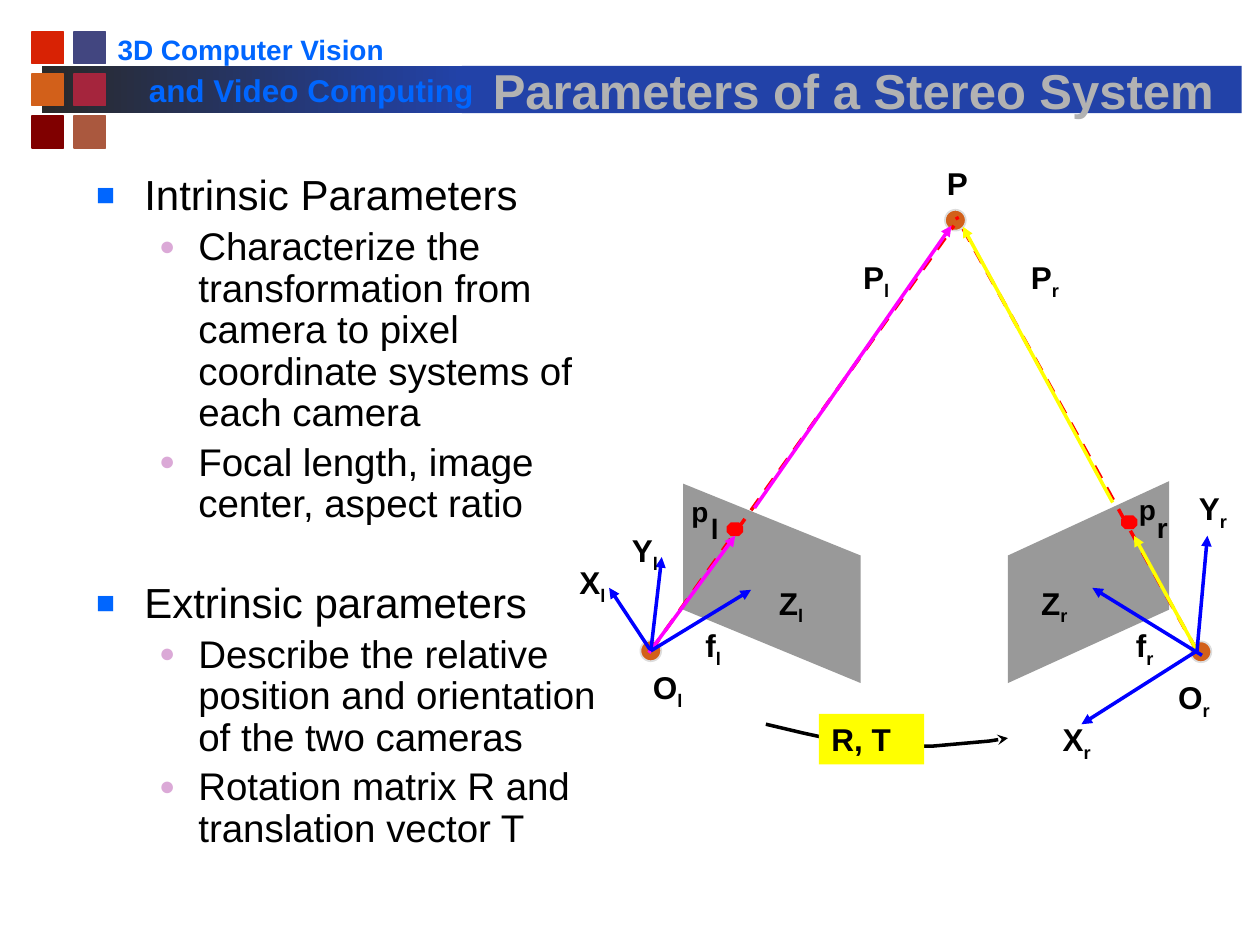
from dataclasses import dataclass

from lxml import etree
from pptx import Presentation, util as u
from pptx.dml.color import RGBColor
from pptx.enum import dml, shapes, text
from pptx.oxml import ns


@dataclass(frozen=True)
class Theme:
    font: str = "Arial"
    ink: str = "000000"
    head: str = "0066FF"
    title: str = "B2B2B2"
    dark: str = "292929"
    bar: str = "2242A8"
    dot: str = "DBA9D7"
    plane: str = "999999"
    ball: str = "D2601A"
    rim: str = "DDDDDD"
    red: str = "FF0000"
    blue: str = "0000FF"
    pink: str = "FF00FF"
    gold: str = "FFFF00"
    big: int = 28
    main: int = 24
    sub: int = 22
    tag: int = 18
    small: int = 16


t = Theme()
rgb = RGBColor.from_string


def write(par, words, size, color=t.ink, bold=True, drop=False):
    """Add one run; drop makes it a subscript."""
    run = par.add_run()
    run.text = words
    font = run.font
    font.name, font.size, font.bold = t.font, u.Pt(size), bold
    font.color.rgb = rgb(color)
    if drop:
        run._r.get_or_add_rPr().set("baseline", "-25000")
    return run


def paint(shape, fill, line=None):
    shape.shadow.inherit = False
    shape.fill.solid()
    shape.fill.fore_color.rgb = rgb(fill)
    if line:
        shape.line.color.rgb = rgb(line)
        shape.line.width = u.Pt(1)
    else:
        shape.line.fill.background()


deck = Presentation()
deck.slide_width, deck.slide_height = u.Cm(25.4), u.Cm(19.05)
slide = deck.slides.add_slide(deck.slide_layouts[5])
draw = slide.shapes
kind = shapes.MSO_SHAPE

# Header bars and coloured squares
for left, wide in ((0.85, 8.47), (9.31, 15.72)):
    bar = draw.add_shape(kind.RECTANGLE, u.Cm(left), u.Cm(1.33), u.Cm(wide), u.Cm(0.95))
    paint(bar, t.bar)
    if left < 1:
        bar.fill.gradient()
        bar.fill.gradient_angle = 0
        for stop, color in zip(bar.fill.gradient_stops, (t.dark, t.bar)):
            stop.color.rgb = rgb(color)

grid = (("D82204", "424680"), ("D2601A", "A5253D"), ("800000", "AA583E"))
for row, pair in enumerate(grid):
    for col, color in enumerate(pair):
        tile = draw.add_shape(kind.RECTANGLE, u.Cm(0.64 + 0.85 * col),
                              u.Cm(0.64 + 0.85 * row), u.Cm(0.64), u.Cm(0.64))
        paint(tile, color, color)

# Title, moved in front of the bars
title = draw.title
draw._spTree.append(title._element)
title.left, title.top, title.width, title.height = (
    u.Cm(9.1), u.Cm(0.85), u.Cm(16.2), u.Cm(1.69))
frame = title.text_frame
frame.auto_size = text.MSO_AUTO_SIZE.NONE
frame.vertical_anchor = text.MSO_ANCHOR.BOTTOM
par = frame.paragraphs[0]
par.alignment = text.PP_ALIGN.CENTER
run = write(par, "Parameters of a Stereo System", t.big, t.title)
glow = etree.fromstring(
    f'<a:effectLst {ns.nsdecls("a")}><a:outerShdw dist="35921" dir="2700000">'
    '<a:srgbClr val="000000"/></a:outerShdw></a:effectLst>')
run._r.rPr.find(ns.qn("a:solidFill")).addnext(glow)

# Bulleted list: level, space before, words
items = (
    (0, 4.8, "Intrinsic Parameters"),
    (1, 4.4, "Characterize the transformation from camera to pixel "
             "coordinate systems of each camera"),
    (1, 4.4, "Focal length, image center, aspect ratio"),
    (0, 32, "Extrinsic parameters"),
    (1, 4.4, "Describe the relative position and orientation of the two cameras"),
    (1, 4.4, "Rotation matrix R and translation vector T"),
)
marks = (("■", t.head, 75, 0.97, 0.97, t.main), ("●", t.dot, 70, 2.06, 0.79, t.sub))
frame = draw.add_textbox(u.Cm(1.69), u.Cm(3.39), u.Cm(11.22), u.Cm(14.39)).text_frame
frame.word_wrap = True
for i, (level, gap, words) in enumerate(items):
    par = frame.add_paragraph() if i else frame.paragraphs[0]
    sign, color, scale, left, hang, size = marks[level]
    par.level, par.line_spacing, par.space_before = level, 0.9, u.Pt(gap)
    props = par._p.get_or_add_pPr()
    props.set("marL", str(u.Cm(left)))
    props.set("indent", str(-u.Cm(hang)))
    bullet = etree.fromstring(
        f'<a:b {ns.nsdecls("a")}><a:buClr><a:srgbClr val="{color}"/></a:buClr>'
        f'<a:buSzPct val="{scale}000"/><a:buFont typeface="{t.font}"/>'
        f'<a:buChar char="{sign}"/></a:b>')
    props.extend(list(bullet))
    write(par, words, size, bold=False)

# Image planes
planes = (
    ((13.77, 9.75), (17.35, 11.2), (17.35, 13.77), (13.77, 12.29)),
    ((23.57, 9.7), (20.32, 11.2), (20.32, 13.77), (23.57, 12.29)),
)
for plane in planes:
    first, *rest = [(u.Cm(x), u.Cm(y)) for x, y in plane]
    pen = draw.build_freeform(*first)
    pen.add_line_segments(rest)
    paint(pen.convert_to_shape(), t.plane)

# Image points, then camera centres and the scene point
for x, y in ((14.65, 10.53), (22.6, 10.39)):
    paint(draw.add_shape(kind.OCTAGON, u.Cm(x), u.Cm(y), u.Cm(0.33), u.Cm(0.28)), t.red)
for x, y in ((12.91, 12.91), (24, 12.93), (19.05, 4.23)):
    ball = draw.add_shape(kind.OVAL, u.Cm(x), u.Cm(y), u.Cm(0.42), u.Cm(0.42))
    paint(ball, t.ball, t.rim)

# Rays, vectors and axes
eye_l, eye_r = (13.12, 13.12), (24.13, 13.12)
rays = (
    (eye_l, (12.28, 11.85), t.blue),
    (eye_r, (21.8, 14.6), t.blue),
    (eye_l, (19.23, 4.55), t.red),
    (eye_r, (19.28, 4.37), t.red),
    ((13.08, 13.16), (14.82, 10.8), t.pink),
    ((15.21, 10.24), (19.18, 4.55), t.pink),
    (eye_r, (22.86, 10.8), t.gold),
    ((22.43, 10.13), (19.41, 4.57), t.gold),
    (eye_l, (15.14, 11.89), t.blue),
    (eye_l, (13.34, 11.23), t.blue),
    ((24.23, 13.21), (22.02, 11.85), t.blue),
    (eye_r, (24.34, 10.8), t.blue),
)
for start, end, color in rays:
    ray = draw.add_connector(shapes.MSO_CONNECTOR.STRAIGHT,
                             *(u.Cm(v) for v in start + end))
    ray.line.color.rgb, ray.line.width = rgb(color), u.Pt(2)
    if color == t.red:
        ray.line.dash_style = dml.MSO_LINE.DASH
    else:
        etree.SubElement(ray.line._get_or_add_ln(), ns.qn("a:tailEnd"), type="triangle")
    etree.SubElement(ray._element.spPr, ns.qn("a:effectLst"))

# Curved arrow between the cameras
curve = ((15.44, 14.6), (16.2, 14.78), (16.94, 14.94), (18.26, 15.04),
         (18.82, 15.04), (19.94, 14.94), (20.32, 14.88))
first, *rest = [(u.Cm(x), u.Cm(y)) for x, y in curve]
pen = draw.build_freeform(*first)
pen.add_line_segments(rest, close=False)
arc = pen.convert_to_shape()
arc.shadow.inherit = False
arc.fill.background()
arc.line.color.rgb, arc.line.width = rgb(t.ink), u.Pt(2)
etree.SubElement(arc.line._get_or_add_ln(), ns.qn("a:tailEnd"), type="stealth")

# Labels: left, top, width, words, subscript, size, colour
tags = [(x, y, 1.48, name, low, t.tag, t.ink) for x, y, name, low in (
    (18.84, 3.18, "P", ""),
    (12.91, 13.34, "O", "l"), (23.5, 13.55, "O", "r"),
    (11.43, 11.22, "X", "l"), (21.17, 14.39, "X", "r"),
    (17.15, 5.08, "P", "l"), (20.53, 5.08, "P", "r"),
    (13.97, 12.49, "f", "l"), (22.65, 12.49, "f", "r"),
    (15.45, 11.64, "Z", "l"), (20.74, 11.64, "Z", "r"),
    (12.49, 10.58, "Y", "l"), (23.92, 9.74, "Y", "r"))]
tags += [(x, y, 0.5, name, "", t.small, t.ink) for x, y, name in (
    (13.94, 9.96, "p"), (14.33, 10.31, "l"), (22.96, 9.93, "p"), (23.32, 10.29, "r"))]
tags += [
    (2.12, 0.53, 6.2, "3D Computer Vision", "", t.small, t.head),
    (2.75, 1.3, 7.19, "and Video Computing", "", t.tag, t.head),
    (16.51, 14.39, 2.12, "R, T", "", t.tag, t.ink),
]
for x, y, wide, name, low, size, color in tags:
    box = draw.add_textbox(u.Cm(x), u.Cm(y), u.Cm(wide), u.Cm(1.02))
    frame = box.text_frame
    frame.word_wrap = True
    if wide < 1:
        box.height = u.Cm(0.69)
        frame.margin_left = frame.margin_right = frame.margin_top = frame.margin_bottom = 0
    write(frame.paragraphs[0], name, size, color)
    if low:
        write(frame.paragraphs[0], low, size, color, drop=True)
    if name == "R, T":
        paint(box, t.gold)

deck.save("out.pptx")
